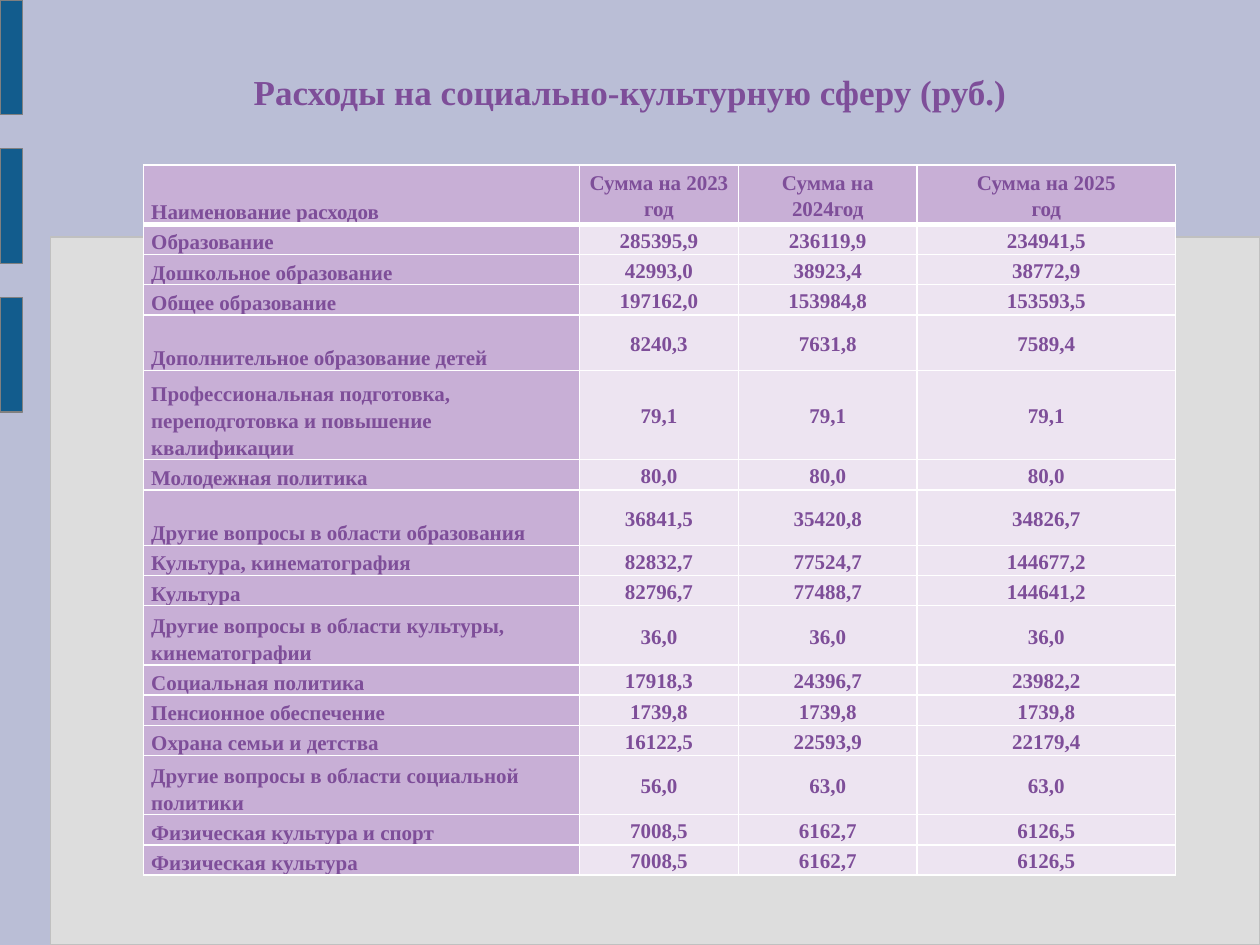
"""Builds a slide with a table of social and cultural spending."""
from lxml import etree
from pptx import Presentation
from pptx import util as u
from pptx.dml import color
from pptx.enum import shapes, text
from pptx.oxml import ns

TITLE = "Расходы на социально-культурную сферу (руб.)"
HEADER = ("Наименование расходов", "Сумма на 2023 год", "Сумма на 2024год", "Сумма на 2025\nгод")
EXPENSES = [
    ("Образование", "285395,9", "236119,9", "234941,5"),
    ("Дошкольное образование", "42993,0", "38923,4", "38772,9"),
    ("Общее образование", "197162,0", "153984,8", "153593,5"),
    ("Дополнительное образование детей", "8240,3", "7631,8", "7589,4"),
    ("Профессиональная подготовка, переподготовка и повышение квалификации", "79,1", "79,1", "79,1"),
    ("Молодежная политика", "80,0", "80,0", "80,0"),
    ("Другие вопросы в области образования", "36841,5", "35420,8", "34826,7"),
    ("Культура, кинематография", "82832,7", "77524,7", "144677,2"),
    ("Культура", "82796,7", "77488,7", "144641,2"),
    ("Другие вопросы в области культуры, кинематографии", "36,0", "36,0", "36,0"),
    ("Социальная политика", "17918,3", "24396,7", "23982,2"),
    ("Пенсионное обеспечение", "1739,8", "1739,8", "1739,8"),
    ("Охрана семьи и детства", "16122,5", "22593,9", "22179,4"),
    ("Другие вопросы в области социальной политики", "56,0", "63,0", "63,0"),
    ("Физическая культура и спорт", "7008,5", "6162,7", "6126,5"),
    ("Физическая культура", "7008,5", "6162,7", "6126,5"),
]
COLUMN_WIDTHS = (3.46, 1.26, 1.42, 2.05)
ROW_HEIGHT = 0.24
TALL_ROWS = {0: 0.47, 4: 0.44, 5: 0.71, 7: 0.44, 10: 0.47, 14: 0.47}
BACKGROUND, PANEL, BAR = "BABED6", "DDDDDD", "125C8D"
PURPLE, LILAC, PALE, WHITE = "7E4E99", "C8AFD6", "EDE4F1", "FFFFFF"
TEXT_FORMAT = {"name": "Times New Roman", "bold": True}
CELL_FORMAT = {"margin_left": u.Inches(0.06), "margin_right": u.Inches(0.06),
               "margin_top": 0, "margin_bottom": 0}
TITLE_FORMAT = {"margin_left": 0, "margin_right": 0, "margin_top": u.Inches(0.04),
                "margin_bottom": 0, "word_wrap": True,
                "vertical_anchor": text.MSO_ANCHOR.TOP}


def paint(fill, hex_color):
    fill.solid()
    fill.fore_color.rgb = color.RGBColor.from_string(hex_color)


def apply(target, values):
    for name, value in values.items():
        setattr(target, name, value)


def write(frame, wording, size, align, spacing):
    frame.text = wording
    for paragraph in frame.paragraphs:
        apply(paragraph, {"alignment": align, "line_spacing": spacing})
        font = paragraph.runs[0].font
        apply(font, {**TEXT_FORMAT, "size": u.Pt(size)})
        paint(font.fill, PURPLE)


def add_block(slide, box, fill, outline):
    block = slide.shapes.add_shape(shapes.MSO_SHAPE.ROUNDED_RECTANGLE, *map(u.Inches, box))
    block.adjustments[0] = 0
    block.shadow.inherit = False
    paint(block.fill, fill)
    paint(block.line.fill, outline)
    block.line.width = u.Pt(0.75)


def add_borders(cell, widths):
    properties = cell._tc.get_or_add_tcPr()
    for side, width in widths.items():
        border = etree.SubElement(properties, ns.qn(f"a:ln{side}"), w=str(u.Pt(width)))
        solid = etree.SubElement(border, ns.qn("a:solidFill"))
        etree.SubElement(solid, ns.qn("a:srgbClr"), val=WHITE)


def add_expense_table(slide):
    rows = [HEADER, *EXPENSES]
    heights = [TALL_ROWS.get(r, ROW_HEIGHT) for r in range(len(rows))]
    box = (1.14, 1.31, sum(COLUMN_WIDTHS), sum(heights))
    table = slide.shapes.add_table(len(rows), len(HEADER), *map(u.Inches, box)).table
    for column, width in zip(table.columns, COLUMN_WIDTHS):
        column.width = u.Inches(width)
    for r, (values, height) in enumerate(zip(rows, heights)):
        table.rows[r].height = u.Inches(height)
        for c, value in enumerate(values):
            cell = table.cell(r, c)
            add_borders(cell, {"L": 1, "R": 1, "T": 3 if r == 1 else 1, "B": 3 if r == 0 else 1})
            paint(cell.fill, LILAC if r == 0 or c == 0 else PALE)
            apply(cell, CELL_FORMAT)
            cell.vertical_anchor = text.MSO_ANCHOR.MIDDLE if c else text.MSO_ANCHOR.BOTTOM
            write(cell.text_frame, value, 12, text.PP_ALIGN.CENTER if c else text.PP_ALIGN.LEFT, 1.15)


def main():
    deck = Presentation()
    deck.slide_width, deck.slide_height = u.Inches(10), u.Inches(7.5)
    slide = deck.slides.add_slide(deck.slide_layouts[6])
    paint(slide.background.fill, BACKGROUND)
    add_block(slide, (0.4, 1.88, 9.6, 5.62), PANEL, "C0C0C0")
    for i in range(3):
        add_block(slide, (0, 1.18 * i, 0.18, 0.91), BAR, "808080")
    add_expense_table(slide)
    title = slide.shapes.add_textbox(*map(u.Inches, (0.73, 0.55, 8.54, 0.68))).text_frame
    apply(title, TITLE_FORMAT)
    write(title, TITLE, 20, text.PP_ALIGN.CENTER, 0.93)
    deck.save("out.pptx")


if __name__ == "__main__":
    main()
